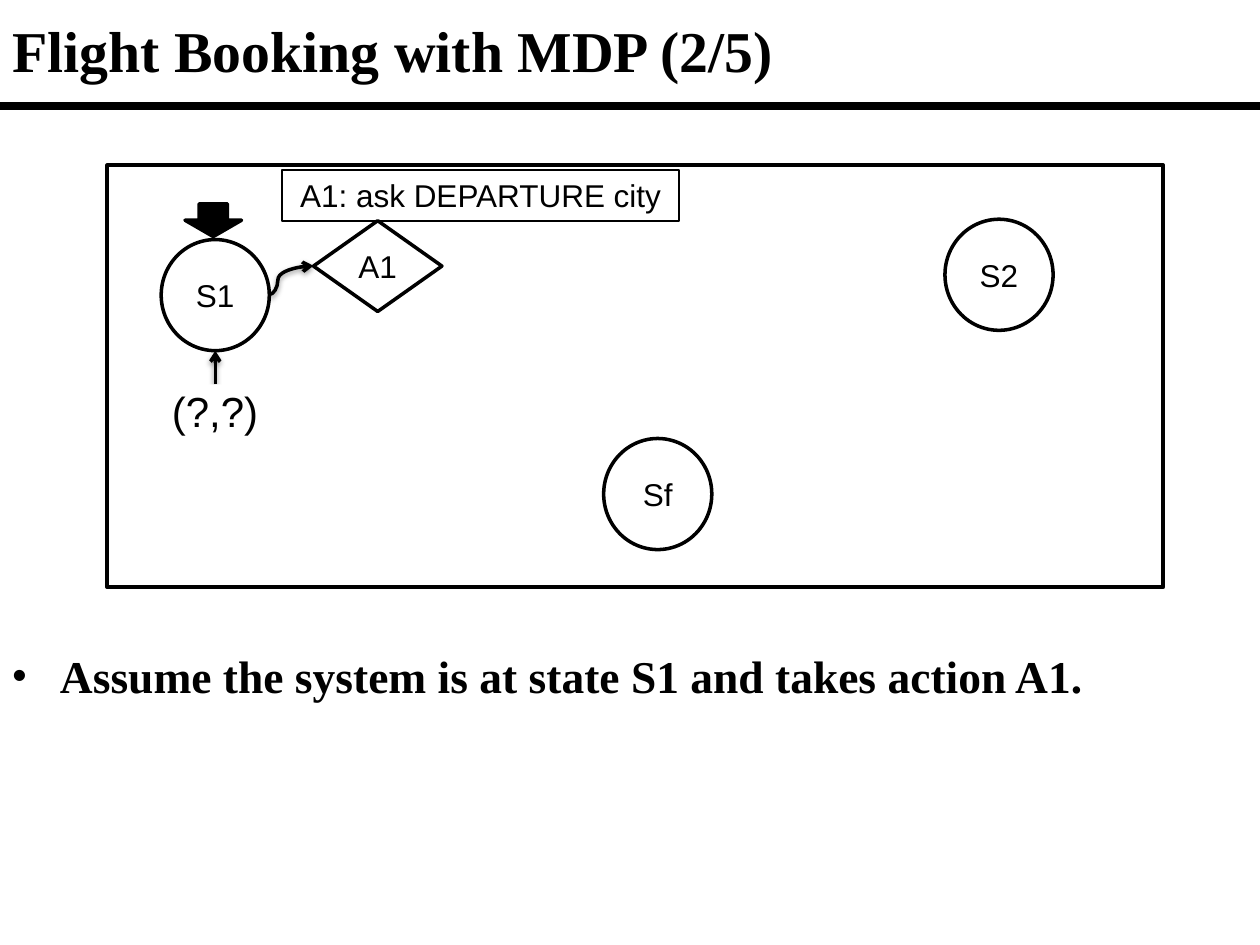
from lxml import etree
from pptx import Presentation
from pptx.dml.color import RGBColor
from pptx.enum.shapes import MSO_CONNECTOR, MSO_SHAPE
from pptx.enum.text import MSO_ANCHOR, MSO_AUTO_SIZE, PP_ALIGN
from pptx.oxml.ns import qn
from pptx.util import Cm, Pt

STRAIGHT, CURVE = MSO_CONNECTOR.STRAIGHT, MSO_CONNECTOR.CURVE
RECTANGLE, OVAL = MSO_SHAPE.RECTANGLE, MSO_SHAPE.OVAL
DIAMOND, DOWN_ARROW = MSO_SHAPE.DIAMOND, MSO_SHAPE.DOWN_ARROW
MIDDLE, CENTER, LEFT = MSO_ANCHOR.MIDDLE, PP_ALIGN.CENTER, PP_ALIGN.LEFT
COLORS = {name: RGBColor.from_string(value) for name, value in
          {"ink": "000000", "paper": "FFFFFF"}.items()}
TITLE_ONLY = 5

presentation = Presentation()
presentation.slide_width, presentation.slide_height = Cm(25.4), Cm(19.05)
slide = presentation.slides.add_slide(presentation.slide_layouts[TITLE_ONLY])


def add_box(kind, left, top, width, height, text="", size=18, line=2, fill="paper"):
    shape = slide.shapes.add_shape(kind, Cm(left), Cm(top), Cm(width), Cm(height))
    shape.shadow.inherit = False
    shape.fill.solid()
    shape.fill.fore_color.rgb = COLORS[fill]
    if line:
        shape.line.color.rgb = COLORS["ink"]
        shape.line.width = Pt(line)
    else:
        shape.line.fill.background()
    if text:
        frame = shape.text_frame
        frame.text = text
        frame.word_wrap = False
        frame.vertical_anchor = MIDDLE
        paragraph = frame.paragraphs[0]
        paragraph.alignment = CENTER
        paragraph.font.name, paragraph.font.size = "Arial", Pt(size)
        paragraph.font.color.rgb = COLORS["ink"]


def add_line(kind, start, end, width, arrow=False):
    connector = slide.shapes.add_connector(kind, *map(Cm, start + end))
    connector.line.color.rgb = COLORS["ink"]
    connector.line.width = Pt(width)
    properties = connector._element.spPr
    effects = etree.SubElement(properties, qn("a:effectLst"))
    if arrow:
        etree.SubElement(properties.find(qn("a:ln")), qn("a:tailEnd"), type="arrow")
        shadow = etree.SubElement(effects, qn("a:outerShdw"), blurRad=str(Pt(3.1)),
                                  dist=str(Pt(1.6)), dir="5400000", rotWithShape="0")
        color = etree.SubElement(shadow, qn("a:srgbClr"), val=str(COLORS["ink"]))
        etree.SubElement(color, qn("a:alpha"), val="38000")
    return connector


# Title and rule below it
title = slide.shapes.title
title.left, title.top, title.width, title.height = Cm(0), Cm(0), Cm(25.4), Cm(2)
title.text_frame.text = "Flight Booking with MDP (2/5)"
title.text_frame.auto_size = MSO_AUTO_SIZE.NONE
title.text_frame.vertical_anchor = MIDDLE
add_line(STRAIGHT, (0, 2.13), (25.4, 2.13), 4.5)

# Diagram frame
add_box(RECTANGLE, 2.16, 3.33, 21.29, 8.51)

# Statement
statement = slide.shapes.add_textbox(Cm(0), Cm(12.93), Cm(25.4), Cm(1.37))
statement.text_frame.word_wrap = True
statement.text_frame.text = "Assume the system is at state S1 and takes action A1."
bullet_paragraph = statement.text_frame.paragraphs[0]
bullet_paragraph.space_before = Pt(4)
bullet = bullet_paragraph._p.get_or_add_pPr()
bullet.set("marL", str(Cm(0.96)))
bullet.set("indent", str(Cm(-0.96)))
etree.SubElement(bullet, qn("a:buSzPct"), val="90000")
etree.SubElement(bullet, qn("a:buFont"), typeface="Arial")
etree.SubElement(bullet, qn("a:buChar"), char="•")

for paragraph, size in ((title.text_frame.paragraphs[0], 33), (bullet_paragraph, 26)):
    paragraph.alignment = LEFT
    paragraph.font.name, paragraph.font.size = "Times New Roman", Pt(size)
    paragraph.font.bold = True
    paragraph.font.color.rgb = COLORS["ink"]

# States
for name, left, top in (("S1", 3.25, 4.83), ("Sf", 12.17, 8.84), ("S2", 19.05, 4.42)):
    add_box(OVAL, left, top, 2.18, 2.24, name)

# Action with its description
add_box(RECTANGLE, 5.69, 3.43, 8, 1.02, "A1: ask DEPARTURE city", line=1)
add_box(DIAMOND, 6.32, 4.45, 2.59, 1.83, "A1")
action_link = add_line(CURVE, (5.43, 5.94), (6.32, 5.36), 2, arrow=True)
adjustments = action_link._element.spPr.find(qn("a:prstGeom")).get_or_add_avLst()
etree.SubElement(adjustments, qn("a:gd"), name="adj1", fmla="val 19400")

# Current state marker and slot values
add_box(DOWN_ARROW, 3.73, 4.11, 1.14, 0.66, fill="ink")
add_line(STRAIGHT, (4.34, 7.75), (4.34, 7.07), 2, arrow=True)
add_box(RECTANGLE, 2.57, 7.75, 3.53, 1.04, "(?,?)", size=24, line=0)

presentation.save("out.pptx")
